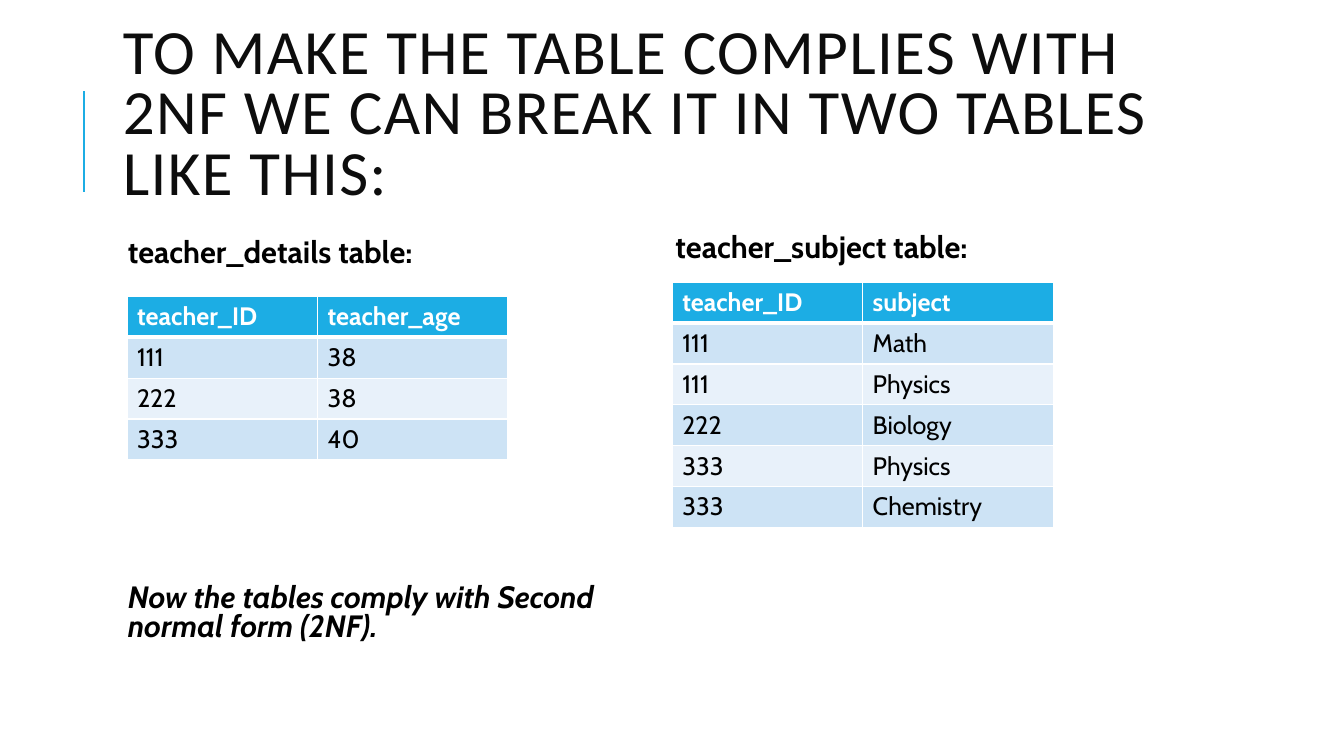
from dataclasses import dataclass

from lxml.etree import SubElement
from pptx import Presentation
from pptx.dml.color import RGBColor
from pptx.enum.shapes import MSO_CONNECTOR
from pptx.enum.text import MSO_ANCHOR, MSO_AUTO_SIZE, PP_ALIGN
from pptx.oxml import parse_xml
from pptx.oxml.ns import nsdecls, qn
from pptx.util import Cm, Pt

TITLE = "TO MAKE THE TABLE COMPLIES WITH 2NF WE CAN BREAK IT IN TWO TABLES LIKE THIS:"
CONCLUSION = "Now the tables comply with Second normal form (2NF)."
PANELS = [
    {
        "paragraphs": ["teacher_details table:", CONCLUSION],
        "body": (2.84, 5.92, 13.21, 11.02),
        "table_at": (3.2, 7.47),
        "rows": [("teacher_ID", "teacher_age"), ("111", "38"), ("222", "38"), ("333", "40")],
    },
    {
        "paragraphs": ["teacher_subject table:"],
        "body": (16.64, 5.79, 13.21, 9.27),
        "table_at": (16.94, 7.11),
        "rows": [
            ("teacher_ID", "subject"),
            ("111", "Math"),
            ("111", "Physics"),
            ("222", "Biology"),
            ("333", "Physics"),
            ("333", "Chemistry"),
        ],
    },
]
TITLE_BOX = (2.84, 1.63, 27, 4.17)
COLUMN_WIDTH, ROW_HEIGHT = 4.8, 1.03


@dataclass(frozen=True)
class Theme:
    title_font: str = "Calibri"
    body_font: str = "Cabin"
    title_size: int = 45
    body_size: int = 22
    table_size: int = 18
    accent: str = "1CADE4"
    title_color: str = "0D0D0D"
    text: str = "000000"
    white: str = "FFFFFF"
    bands: tuple = ("CDE3F5", "E8F1FA")
    thin: int = 1
    thick: int = 3


theme = Theme()


def format_runs(paragraph, font_name, size, color, bold=False, italic=False):
    for run in paragraph.runs:
        run.font.name = font_name
        run.font.size = Pt(size)
        run.font.bold = bold
        run.font.italic = italic
        run.font.color.rgb = RGBColor.from_string(color)


def place(shape, box):
    shape.left, shape.top, shape.width, shape.height = map(Cm, box)
    shape.text_frame.auto_size = MSO_AUTO_SIZE.NONE
    shape.text_frame.word_wrap = True


def add_title(slide):
    shape = slide.shapes.title
    place(shape, TITLE_BOX)
    frame = shape.text_frame
    frame.text = TITLE
    frame.vertical_anchor = MSO_ANCHOR.MIDDLE
    frame.margin_bottom = Cm(1.67)
    paragraph = frame.paragraphs[0]
    paragraph.alignment = PP_ALIGN.LEFT
    paragraph.line_spacing = 0.8
    format_runs(paragraph, theme.title_font, theme.title_size, theme.title_color)
    for run in paragraph.runs:
        run.font._element.set("spc", "100")


def add_accent_line(slide):
    line = slide.shapes.add_connector(MSO_CONNECTOR.STRAIGHT, Cm(2.12), Cm(4.83), Cm(2.12), Cm(2.29))
    line.line.color.rgb = RGBColor.from_string(theme.accent)
    line.line.width = Pt(1.5)
    SubElement(line._element.spPr, qn("a:effectLst"))


def fill_body(shape, panel):
    place(shape, panel["body"])
    frame = shape.text_frame
    frame.text = "\n".join(panel["paragraphs"])
    frame.vertical_anchor = MSO_ANCHOR.TOP
    frame.margin_left = frame.margin_right = frame.margin_top = frame.margin_bottom = Cm(0.13)
    for paragraph, space_before in zip(frame.paragraphs, (12, 223)):
        paragraph.line_spacing = 0.8
        paragraph.space_before = Pt(space_before)
        paragraph.space_after = Pt(2)
        properties = paragraph._p.get_or_add_pPr()
        properties.set("marL", str(Cm(0.25)))
        properties.set("indent", "0")
        SubElement(properties, qn("a:buNone"))
        format_runs(paragraph, theme.body_font, theme.body_size, theme.text, True, paragraph.text == CONCLUSION)


def set_borders(cell, row_index):
    top = theme.thick if row_index == 1 else theme.thin
    bottom = theme.thick if row_index == 0 else theme.thin
    widths = {"lnL": theme.thin, "lnR": theme.thin, "lnT": top, "lnB": bottom}
    properties = cell._tc.get_or_add_tcPr()
    for position, (side, width) in enumerate(widths.items()):
        border = parse_xml(
            f'<a:{side} {nsdecls("a")} w="{Pt(width)}"><a:solidFill>'
            f'<a:srgbClr val="{theme.white}"/></a:solidFill></a:{side}>'
        )
        properties.insert(position, border)


def add_data_table(slide, panel):
    rows = panel["rows"]
    left, top = panel["table_at"]
    column_count = len(rows[0])
    table = slide.shapes.add_table(
        len(rows), column_count, Cm(left), Cm(top),
        Cm(COLUMN_WIDTH * column_count), Cm(ROW_HEIGHT * len(rows)),
    ).table
    for row_index, values in enumerate(rows):
        header = row_index == 0
        fill = theme.accent if header else theme.bands[(row_index - 1) % 2]
        color = theme.white if header else theme.text
        for column_index, value in enumerate(values):
            cell = table.cell(row_index, column_index)
            cell.text_frame.text = value
            cell.fill.solid()
            cell.fill.fore_color.rgb = RGBColor.from_string(fill)
            set_borders(cell, row_index)
            format_runs(cell.text_frame.paragraphs[0], theme.body_font, theme.table_size, color, header)


def main():
    presentation = Presentation()
    presentation.slide_width = Cm(33.87)
    presentation.slide_height = Cm(19.05)
    slide = presentation.slides.add_slide(presentation.slide_layouts.get_by_name("Two Content"))
    add_accent_line(slide)
    add_title(slide)
    for placeholder_index, panel in enumerate(PANELS, start=1):
        fill_body(slide.placeholders[placeholder_index], panel)
        add_data_table(slide, panel)
    presentation.save("out.pptx")


if __name__ == "__main__":
    main()
